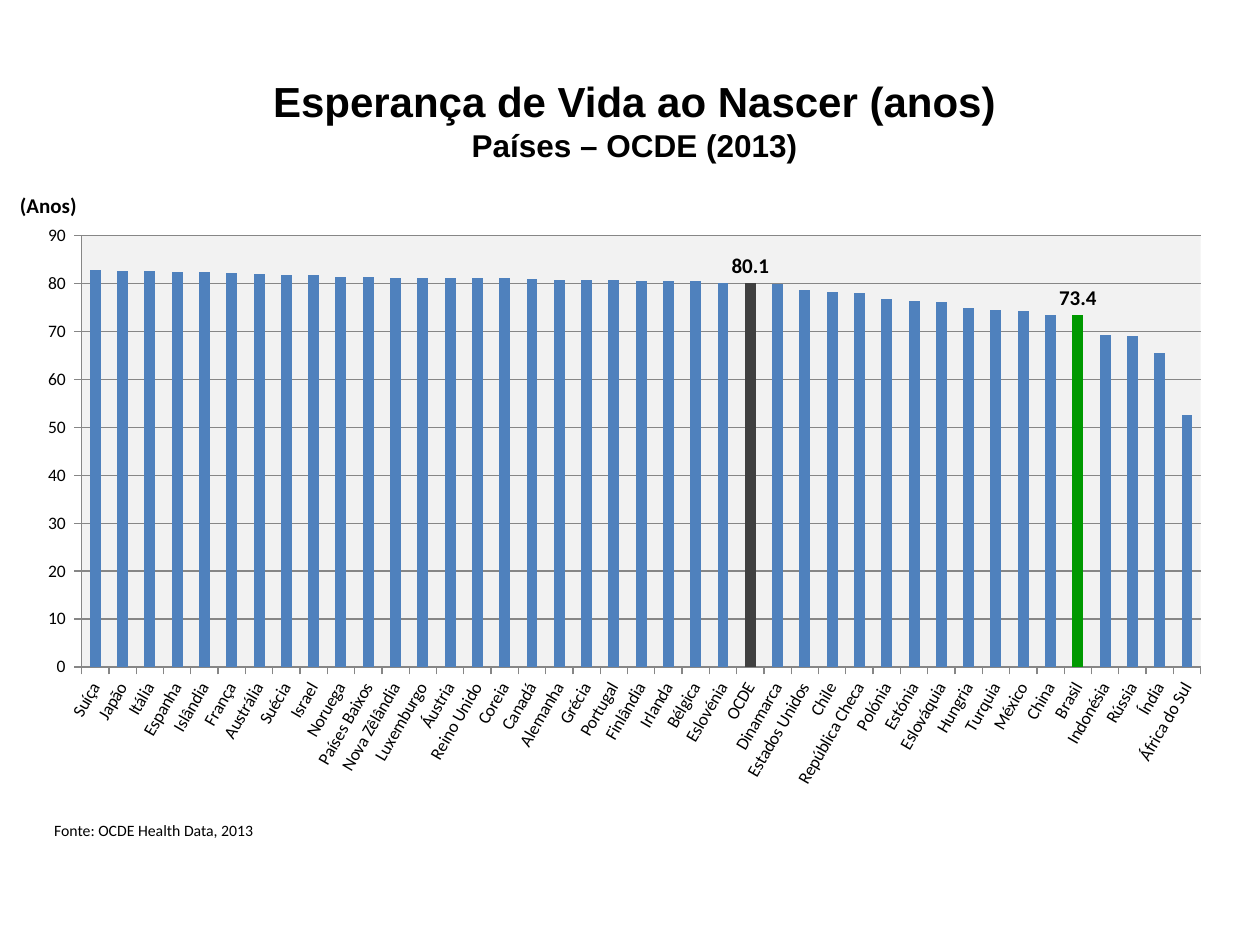
from dataclasses import dataclass

from lxml.etree import SubElement
from pptx import Presentation
from pptx.chart.data import CategoryChartData
from pptx.dml.color import RGBColor
from pptx.enum.chart import XL_CHART_TYPE, XL_LABEL_POSITION, XL_TICK_MARK
from pptx.enum.text import MSO_ANCHOR, PP_ALIGN
from pptx.oxml.ns import qn
from pptx.util import Inches, Pt


@dataclass(frozen=True)
class Theme:
    text: str = "000000"
    bar: str = "4F81BD"
    oecd: str = "404040"
    brazil: str = "009900"
    plot: str = "F2F2F2"
    line: str = "868686"
    heading_font: str = "Arial"
    body_font: str = "Calibri"
    title: int = 24
    subtitle: int = 18
    label: int = 12
    axis: int = 10
    source: int = 9


THEME = Theme()

LIFE_EXPECTANCY = {
    "Suíça": 82.8, "Japão": 82.7, "Itália": 82.7, "Espanha": 82.4,
    "Islândia": 82.4, "França": 82.2, "Austrália": 82, "Suécia": 81.9,
    "Israel": 81.8, "Noruega": 81.4, "Países Baixos": 81.3,
    "Nova Zêlândia": 81.2, "Luxemburgo": 81.1, "Áustria": 81.1,
    "Reino Unido": 81.1, "Coreia": 81.1, "Canadá": 81, "Alemanha": 80.8,
    "Grécia": 80.8, "Portugal": 80.8, "Finlândia": 80.6, "Irlanda": 80.6,
    "Bélgica": 80.5, "Eslovénia": 80.1, "OCDE": 80.1, "Dinamarca": 79.9,
    "Estados Unidos": 78.7, "Chile": 78.3, "República Checa": 78,
    "Polónia": 76.9, "Estónia": 76.3, "Eslováquia": 76.1, "Hungria": 75,
    "Turquia": 74.6, "México": 74.2, "China": 73.5, "Brasil": 73.4,
    "Indonésia": 69.3, "Rússia": 69, "Índia": 65.5, "África do Sul": 52.6,
}
HIGHLIGHTS = {"OCDE": THEME.oecd, "Brasil": THEME.brazil}


def set_font(font, size, name=THEME.body_font, bold=False, color=THEME.text):
    font.name = name
    font.size = Pt(size)
    font.bold = bold
    font.color.rgb = RGBColor.from_string(color)


def add_run(p, text, **style):
    r = p.add_run()
    r.text = text
    set_font(r.font, **style)


def fill_solid(fill, color):
    fill.solid()
    fill.fore_color.rgb = RGBColor.from_string(color)


class SlideBuilder:
    def __init__(self, slide, theme):
        self.s = slide
        self.theme = theme

    def text(self, box, lines, align=PP_ALIGN.LEFT, anchor=MSO_ANCHOR.TOP,
             inset=None, space_after=0):
        """Add one paragraph; each (text, style) pair is a line of it."""
        tf = self.s.shapes.add_textbox(*map(Inches, box)).text_frame
        tf.word_wrap = True
        tf.vertical_anchor = anchor
        if inset is not None:
            tf.margin_left = tf.margin_right = Inches(inset)
            tf.margin_top = tf.margin_bottom = Inches(inset)
        p = tf.paragraphs[0]
        p.alignment = align
        p.space_after = Pt(space_after)
        for i, (text, style) in enumerate(lines):
            if i:
                p.add_line_break()
            add_run(p, text, **style)

    def column_chart(self, box, values, highlights, layout):
        t = self.theme
        data = CategoryChartData()
        data.categories = list(values)
        data.add_series("Series 1", list(values.values()))
        chart = self.s.shapes.add_chart(
            XL_CHART_TYPE.COLUMN_CLUSTERED, *map(Inches, box), data).chart
        chart.has_legend = False
        chart.has_title = False
        set_font(chart.font, t.axis)

        # Columns, with the highlighted countries labelled
        plot = chart.plots[0]
        plot.gap_width = 150
        plot.vary_by_categories = False
        series = plot.series[0]
        fill_solid(series.format.fill, t.bar)
        names = list(values)
        for name, color in highlights.items():
            point = series.points[names.index(name)]
            fill_solid(point.format.fill, color)
            set_font(point.data_label.font, t.label, bold=True)
            point.data_label.position = XL_LABEL_POSITION.OUTSIDE_END

        # Axes and gridlines
        cat, val = chart.category_axis, chart.value_axis
        val.minimum_scale, val.maximum_scale, val.major_unit = 0, 90, 10
        val.has_major_gridlines = True
        val.tick_labels.number_format = r"#,##0_ ;\-#,##0\ "
        val.tick_labels.number_format_is_linked = False
        for axis in (cat, val):
            axis.major_tick_mark = XL_TICK_MARK.OUTSIDE
            set_font(axis.tick_labels.font, t.axis)
        for fmt in (cat.format, val.format, val.major_gridlines.format):
            fmt.line.color.rgb = RGBColor.from_string(t.line)
            fmt.line.width = Pt(0.75)
        body = cat._element.find(qn("c:txPr")).find(qn("a:bodyPr"))
        body.set("rot", str(-60 * 60000))
        body.set("vert", "horz")

        self.plot_area(chart, layout)

    def plot_area(self, chart, layout):
        """Place the inner plot area (chart fractions) and shade it."""
        area = chart._chartSpace.find(qn("c:chart")).find(qn("c:plotArea"))
        old = area.find(qn("c:layout"))
        if old is not None:
            area.remove(old)
        holder = SubElement(area, qn("c:layout"))
        area.insert(0, holder)
        manual = SubElement(holder, qn("c:manualLayout"))
        settings = {"layoutTarget": "inner", "xMode": "edge", "yMode": "edge"}
        for tag, value in {**settings, **layout}.items():
            SubElement(manual, qn(f"c:{tag}")).set("val", str(value))
        fill = SubElement(SubElement(area, qn("c:spPr")), qn("a:solidFill"))
        SubElement(fill, qn("a:srgbClr")).set("val", self.theme.plot)


def main():
    prs = Presentation()
    prs.slide_width, prs.slide_height = Inches(10), Inches(7.5)
    t = THEME
    b = SlideBuilder(prs.slides.add_slide(prs.slide_layouts[6]), t)

    # Title
    heading = dict(name=t.heading_font, bold=True)
    b.text((1.69, 0.44, 6.69, 1.02),
           [("Esperança de Vida ao Nascer (anos)", dict(size=t.title, **heading)),
            ("Países – OCDE (2013)", dict(size=t.subtitle, **heading))],
           align=PP_ALIGN.CENTER, anchor=MSO_ANCHOR.MIDDLE, space_after=6)

    # Source
    b.text((0.43, 6.51, 3.2, 0.31),
           [("Fonte: OCDE Health Data, 2013", dict(size=t.source))], inset=0)

    # Chart and its unit
    b.column_chart((0.2, 1.7, 9.53, 4.65), LIFE_EXPECTANCY, HIGHLIGHTS,
                   layout=dict(x=0.047, y=0.037, w=0.932, h=0.736))
    b.text((0.06, 1.48, 0.92, 0.38),
           [("(Anos)", dict(size=t.label, bold=True))])

    prs.save("out.pptx")


if __name__ == "__main__":
    main()
